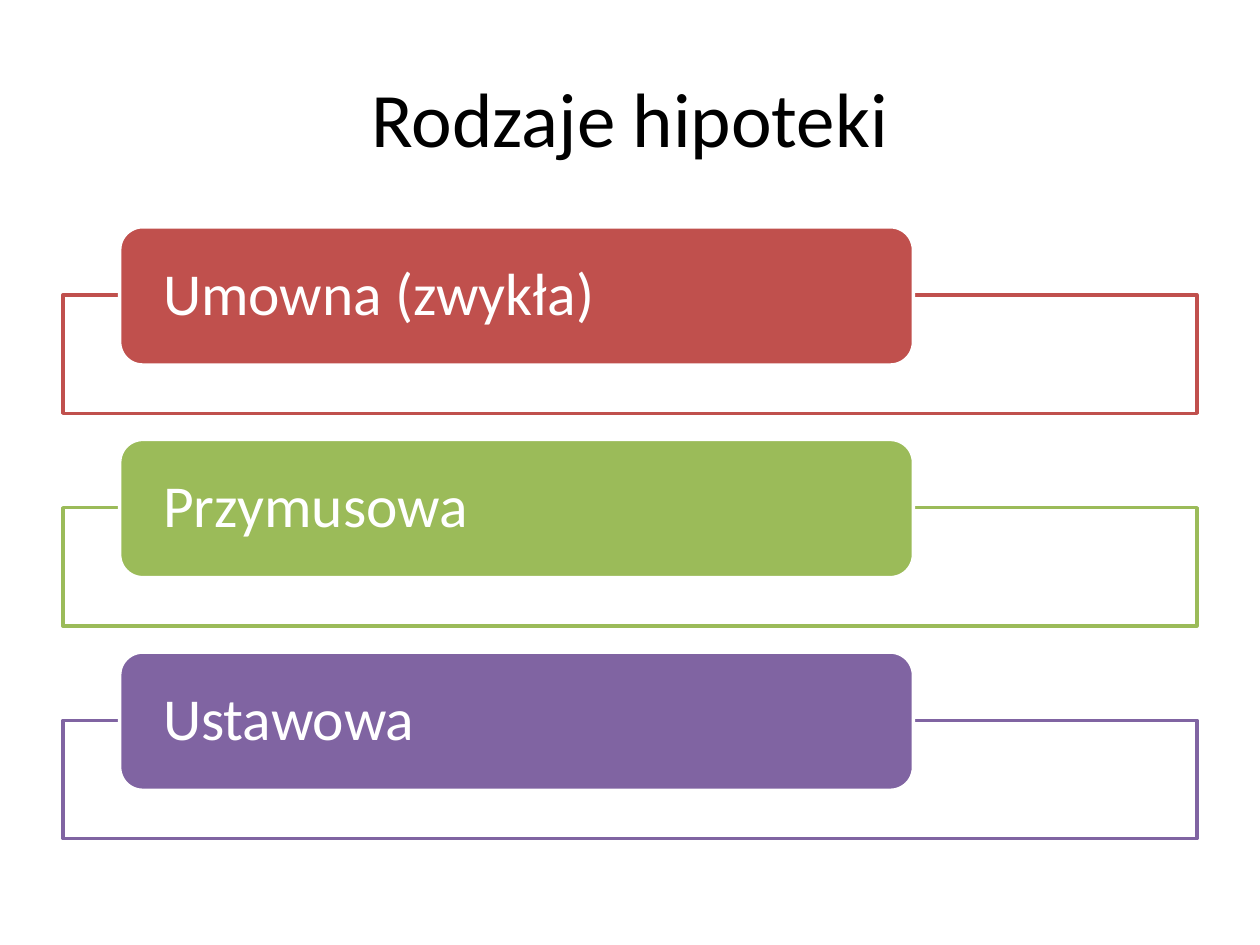
from pptx import Presentation
from pptx.dml.color import RGBColor
from pptx.enum.shapes import MSO_SHAPE
from pptx.enum.text import MSO_ANCHOR, PP_ALIGN
from pptx.util import Pt

RECTANGLE = MSO_SHAPE.RECTANGLE
ROUNDED = MSO_SHAPE.ROUNDED_RECTANGLE
MIDDLE = MSO_ANCHOR.MIDDLE
LEFT, CENTER = PP_ALIGN.LEFT, PP_ALIGN.CENTER

COLORS = {
    "black": "000000",
    "white": "FFFFFF",
    "red": "C0504D",
    "green": "9BBB59",
    "purple": "8064A2",
}
MORTGAGE_TYPES = [
    ("Umowna (zwykła)", "red"),
    ("Przymusowa", "green"),
    ("Ustawowa", "purple"),
]
FIRST_TOP = 129.6
ROW_STEP = 121.5


def add_panel(kind, left, top, width, height, fill, line):
    panel = page.shapes.add_shape(kind, Pt(left), Pt(top), Pt(width), Pt(height))
    panel.shadow.inherit = False
    panel.fill.solid()
    panel.fill.fore_color.rgb = RGBColor.from_string(COLORS[fill])
    panel.line.color.rgb = RGBColor.from_string(COLORS[line])
    panel.line.width = Pt(2)
    return panel


def write_text(box, text, size, color, align, inset):
    frame = box.text_frame
    frame.word_wrap = True
    frame.vertical_anchor = MIDDLE
    frame.margin_left = frame.margin_right = Pt(inset)
    frame.margin_top = frame.margin_bottom = Pt(0)
    para = frame.paragraphs[0]
    para.alignment = align
    span = para.add_run()
    span.text = text
    span.font.name = "Calibri"
    span.font.size = Pt(size)
    span.font.color.rgb = RGBColor.from_string(COLORS[color])
    return para


deck = Presentation()
deck.slide_width, deck.slide_height = Pt(720), Pt(540)
page = deck.slides.add_slide(deck.slide_layouts[6])

# Title
title = page.shapes.add_textbox(Pt(36), Pt(21.6), Pt(648), Pt(90))
write_text(title, "Rodzaje hipoteki", 44, "black", CENTER, 7.2)

# One outlined frame with a label on its top edge per mortgage type
for row, (name, color) in enumerate(MORTGAGE_TYPES):
    top = FIRST_TOP + row * ROW_STEP
    add_panel(RECTANGLE, 36, top + 39, 648, 67.6, "white", color)
    label = add_panel(ROUNDED, 68.4, top, 453.6, 79, color, "white")
    para = write_text(label, name, 34, "white", LEFT, 21)
    para.line_spacing = 0.9

deck.save("out.pptx")
